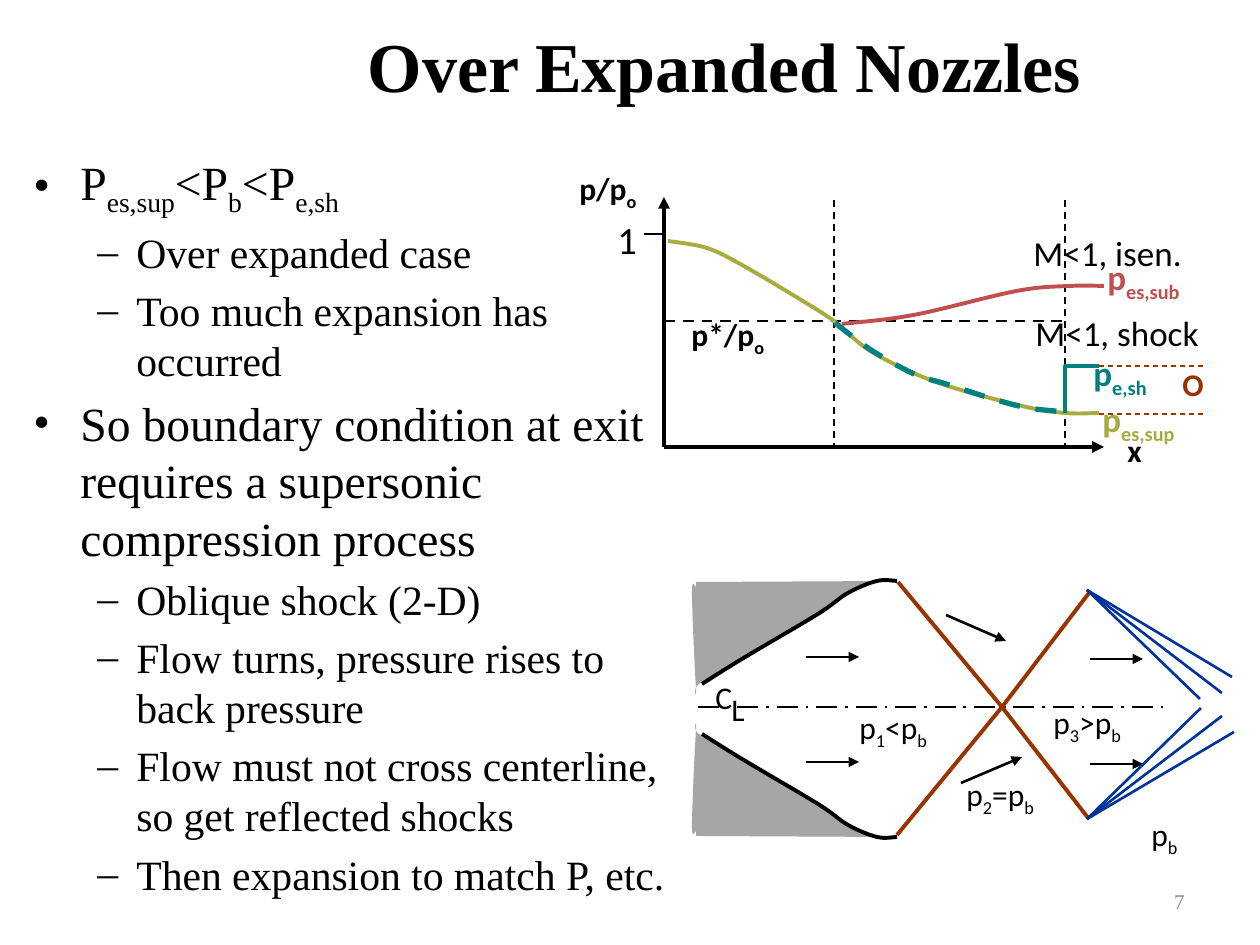
from dataclasses import dataclass

from lxml import etree
from pptx import Presentation
from pptx.dml.color import RGBColor
from pptx.enum.dml import MSO_LINE
from pptx.enum.text import MSO_ANCHOR, PP_ALIGN
from pptx.oxml.ns import qn
from pptx.util import Emu, Pt

DASH = MSO_LINE.DASH
CENTER_DASH = MSO_LINE.LONG_DASH_DOT
MIDDLE, TOP = MSO_ANCHOR.MIDDLE, MSO_ANCHOR.TOP
LEFT, CENTER, RIGHT = PP_ALIGN.LEFT, PP_ALIGN.CENTER, PP_ALIGN.RIGHT
EMU_PER_PX = 914400 / 126
MIRROR_SUM = 1418


@dataclass(frozen=True)
class Theme:
    serif: str = "Times New Roman"
    sans: str = "Calibri"
    black: str = "000000"
    gray: str = "8C8C8C"
    wall: str = "A6A6A6"
    olive: str = "A8AB3D"
    red: str = "C0504D"
    teal: str = "008080"
    shock: str = "993300"
    fan: str = "003399"
    title: float = 40
    bullet: float = 27.2
    sub_bullet: float = 23.8
    tick: float = 22
    curve_label: float = 20
    label: float = 18
    page: float = 12


T = Theme()

BULLETS = [
    (0, "P|es,sup|<P|b|<P|e,sh"),
    (1, "Over expanded case"),
    (1, "Too much expansion has occurred"),
    (0, "So boundary condition at exit requires a supersonic compression process"),
    (1, "Oblique shock (2-D)"),
    (1, "Flow turns, pressure rises to back pressure"),
    (1, "Flow must not cross centerline, so get reflected shocks"),
    (1, "Then expansion to match P, etc."),
]
LEVELS = [("•", 47, -47, T.bullet), ("–", 103, -39, T.sub_bullet)]

ISENTROPIC = [(668, 241), (707, 248), (742, 265), (793, 295), (834, 321),
              (872, 352), (936, 382), (1022, 406), (1065, 413), (1099, 413)]
SUBSONIC = [(842, 324), (914, 315), (1017, 291), (1070, 286), (1104, 286)]
SUPERSONIC = [(835, 323), (871, 350), (914, 374), (946, 384), (993, 399),
              (1028, 408), (1066, 412)]
EXIT_SHOCK = [(1065, 413), (1065, 366), (1099, 366)]
WALL_LINE = [(702, 684), (742, 659), (818, 614), (848, 593), (877, 581), (897, 581)]
WALL_BODY = [(696, 582), (696, 587), (692, 592), (696, 687), (699, 684),
             (740, 659), (815, 614), (845, 593), (874, 581), (895, 581)]


def emu(px):
    return Emu(round(px * EMU_PER_PX))


def rgb(color):
    return RGBColor.from_string(color)


def fill_paragraph(p, text, size, font, color, bold=False):
    for i, part in enumerate(text.split("|")):
        if not part:
            continue
        r = p.add_run()
        r.text = part
        r.font.size, r.font.name, r.font.bold = Pt(size), font, bold
        r.font.color.rgb = rgb(color)
        if i % 2:
            r._r.get_or_add_rPr().set("baseline", "-25000")


def add_box(s, x, y, w, h, anchor=TOP, wrap=True):
    tf = s.shapes.add_textbox(*map(emu, (x, y, w, h))).text_frame
    tf.word_wrap = wrap
    tf.vertical_anchor = anchor
    return tf


def add_label(s, text, x, y, w, h, size=T.label, color=T.black, bold=False,
              font=T.sans, align=LEFT, anchor=TOP, wrap=True):
    p = add_box(s, x, y, w, h, anchor, wrap).paragraphs[0]
    p.alignment = align
    fill_paragraph(p, text, size, font, color, bold)


def add_bullets(s):
    tf = add_box(s, 21, 147, 672, 766)
    for i, (level, text) in enumerate(BULLETS):
        mark, margin, indent, size = LEVELS[level]
        p = tf.add_paragraph() if i else tf.paragraphs[0]
        pPr = p._p.get_or_add_pPr()
        pPr.set("marL", str(emu(margin)))
        pPr.set("indent", str(emu(indent)))
        etree.SubElement(pPr, qn("a:buFont")).set("typeface", T.serif)
        etree.SubElement(pPr, qn("a:buChar")).set("char", mark)
        p.level = level
        p.space_before = Pt(round(size * 0.198, 1) if i else 0)
        fill_paragraph(p, text, size, T.serif, T.black)


def style_line(line, color, width, dash=None):
    line.color.rgb = rgb(color)
    line.width = Pt(width)
    if dash:
        line.dash_style = dash


def add_line(s, x1, y1, x2, y2, color=T.black, width=1.5, dash=None, arrow=False):
    sp = s.shapes.add_connector(1, *map(emu, (x1, y1, x2, y2)))
    style_line(sp.line, color, width, dash)
    spPr = sp._element.spPr
    if arrow:
        etree.SubElement(spPr.find(qn("a:ln")), qn("a:tailEnd")).set("type", "triangle")
    etree.SubElement(spPr, qn("a:effectLst"))


def mirror(points):
    return [(x, MIRROR_SUM - y) for x, y in points]


def bend_segments(sp):
    anchors = [(int(pt.get("x")), int(pt.get("y")))
               for pt in sp._element.iter(qn("a:pt"))]
    padded = [anchors[0], *anchors, anchors[-1]]
    segments = list(sp._element.iter(qn("a:lnTo")))
    for segment, a, b, c, d in zip(segments, padded, padded[1:], padded[2:], padded[3:]):
        first = [q + (r - p) / 6 for p, q, r in zip(a, b, c)]
        second = [q - (r - p) / 6 for p, q, r in zip(b, c, d)]
        bend = etree.Element(qn("a:cubicBezTo"))
        for x, y in (first, second, c):
            pt = etree.SubElement(bend, qn("a:pt"))
            pt.set("x", str(round(x)))
            pt.set("y", str(round(y)))
        segment.getparent().replace(segment, bend)


def add_outline(s, points, color, width=2.25, dash=None, filled=False, curved=True):
    start, *rest = [(emu(x), emu(y)) for x, y in points]
    builder = s.shapes.build_freeform(*start)
    builder.add_line_segments(rest, close=filled)
    sp = builder.convert_to_shape()
    sp.shadow.inherit = False
    if curved:
        bend_segments(sp)
    if filled:
        sp.fill.solid()
        sp.fill.fore_color.rgb = rgb(color)
        sp.line.fill.background()
    else:
        sp.fill.background()
        style_line(sp.line, color, width, dash)


def add_pressure_plot(s):
    add_label(s, "p|es,sup", 1090, 391, 103, 54, T.curve_label, T.olive, True, wrap=False)
    add_label(s, "p*/p|o", 679, 309, 122, 63, bold=True)
    add_line(s, 665, 321, 1062, 321, dash=DASH)
    add_line(s, 664, 447, 664, 197, width=2.25, arrow=True)
    add_line(s, 664, 447, 1104, 447, width=2.25, arrow=True)
    add_label(s, "x", 1115, 425, 63, 63, bold=True)
    add_label(s, "p/p|o", 567, 163, 102, 63, bold=True)
    add_line(s, 662, 234, 644, 234, width=0.75)
    add_label(s, "1", 605, 210, 54, 59, T.tick)
    for x in (834, 1065):
        add_line(s, x, 200, x, 447, width=1, dash=DASH)
    add_outline(s, ISENTROPIC, T.olive)
    add_outline(s, SUBSONIC, T.red)
    add_label(s, "p|es,sub", 1095, 249, 103, 54, T.curve_label, T.red, True, wrap=False)
    add_outline(s, EXIT_SHOCK, T.teal, curved=False)
    add_label(s, "p|e,sh", 1081, 345, 82, 55, T.curve_label, T.teal, True, wrap=False)
    add_outline(s, SUPERSONIC, T.teal, 3, DASH)
    add_label(s, "M<1, isen.", 1021, 225, 194, 54, T.curve_label)
    add_label(s, "M<1, shock", 1023, 305, 194, 54, T.curve_label)
    add_label(s, "O", 1170, 359, 59, 63, color=T.shock, bold=True)
    for y in (366, 414):
        add_line(s, 1099, y, 1204, y, T.shock, 0.75, DASH)


def add_nozzle(s):
    for side in (list, mirror):
        add_outline(s, side(WALL_BODY), T.wall, filled=True)
        add_outline(s, side(WALL_LINE), T.black)
    for x, y in ((806, 657), (806, 762), (1090, 659), (1090, 764)):
        add_line(s, x, y, x + 53, y, arrow=True)
    add_line(s, 946, 615, 1006, 641, arrow=True)
    add_line(s, 961, 783, 1022, 757, arrow=True)
    add_line(s, 698, 707, 1164, 707, dash=CENTER_DASH)
    add_label(s, "C", 703, 672, 53, 63)
    add_label(s, "L", 719, 684, 48, 63)
    for x, y in ((898, 582), (897, 835), (1089, 593), (1089, 819)):
        add_line(s, x, y, 1002, 707, T.shock, 2.25)
    for y, ends in ((819, ((1201, 708), (1222, 716), (1234, 732))),
                    (590, ((1200, 699), (1222, 693), (1232, 677)))):
        for end in ends:
            add_line(s, 1087, y, *end, T.fan)
    for text, x, y in (("p|1|<p|b", 847, 702), ("p|2|=p|b", 954, 769),
                       ("p|3|>p|b", 1041, 697)):
        add_label(s, text, x, y, 150, 63)
    add_label(s, "p|b", 1139, 809, 68, 63)


def main():
    prs = Presentation()
    prs.slide_width, prs.slide_height = emu(1260), emu(945)
    s = prs.slides.add_slide(prs.slide_layouts[6])
    add_label(s, "Over Expanded Nozzles", 252, 18, 945, 92, T.title, bold=True,
              font=T.serif, align=CENTER, anchor=MIDDLE)
    add_bullets(s)
    add_label(s, "7", 903, 876, 294, 50, T.page, T.gray,
              font=T.serif, align=RIGHT, anchor=MIDDLE)
    add_pressure_plot(s)
    add_nozzle(s)
    prs.save("out.pptx")


if __name__ == "__main__":
    main()
